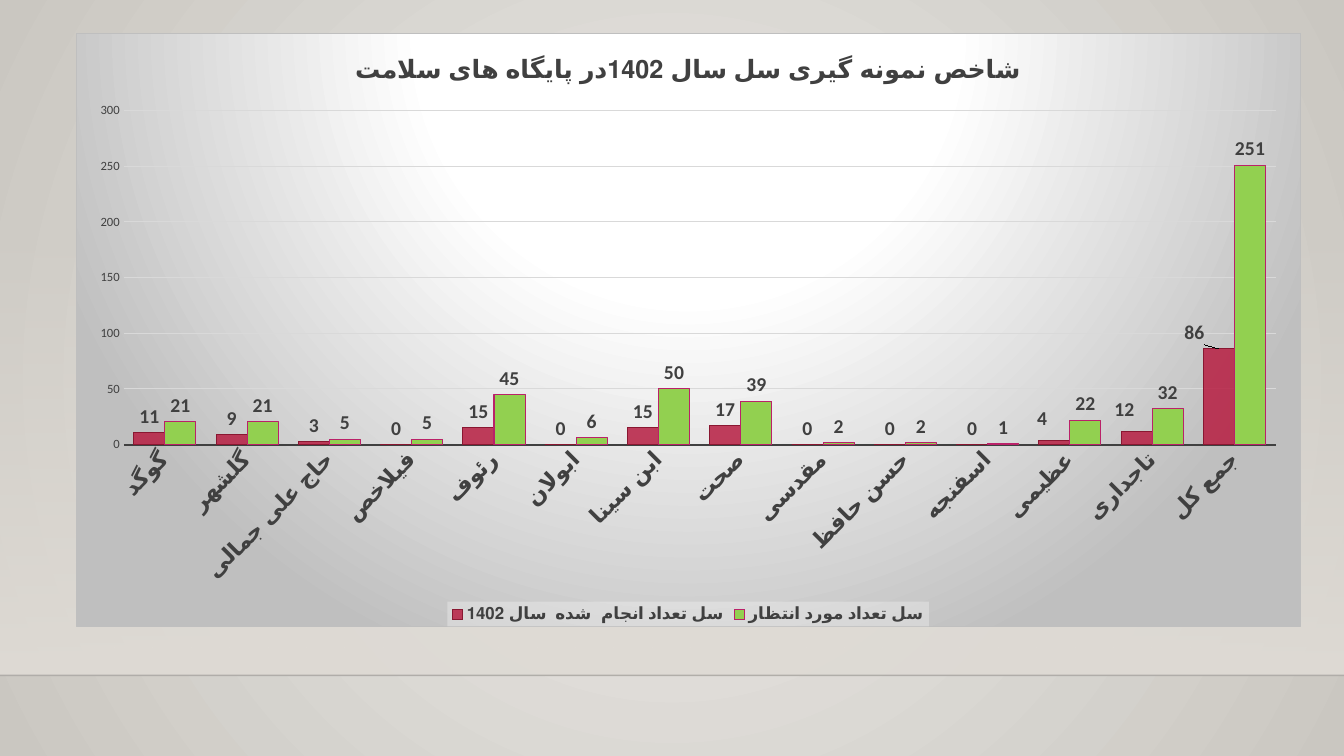
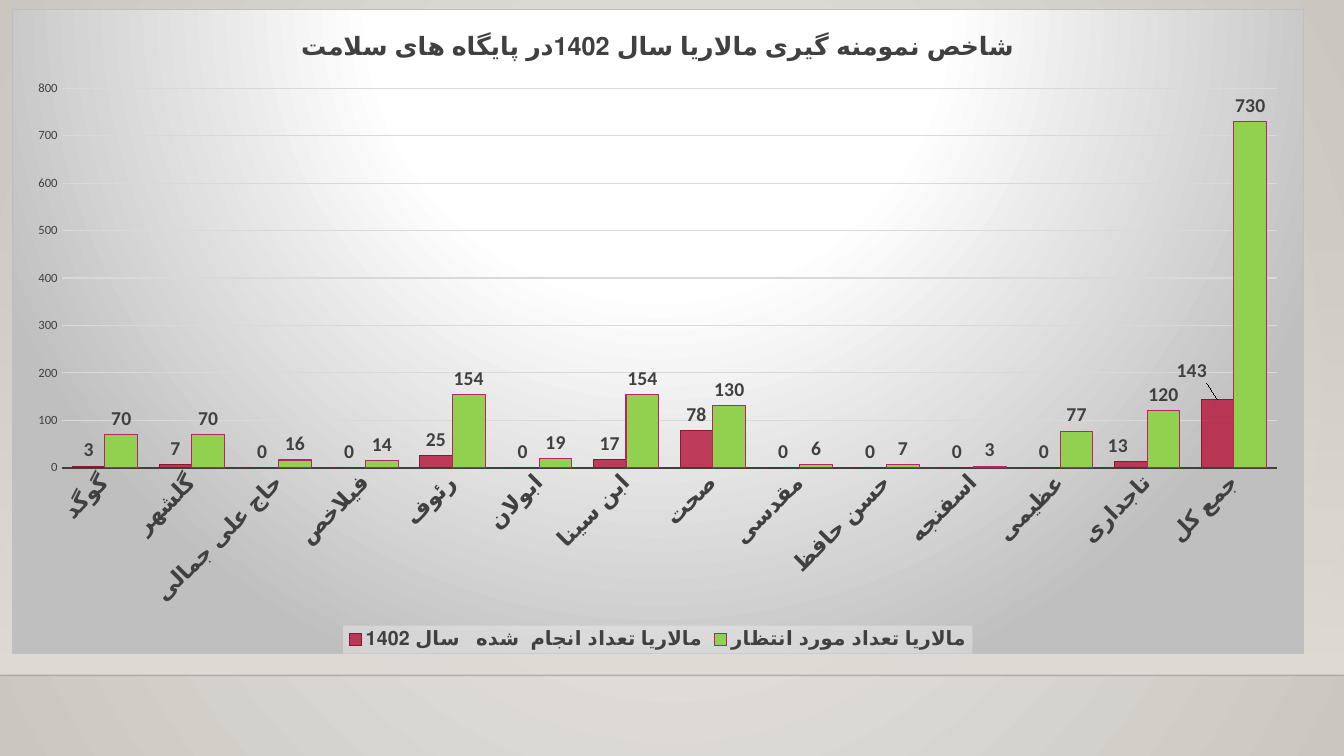
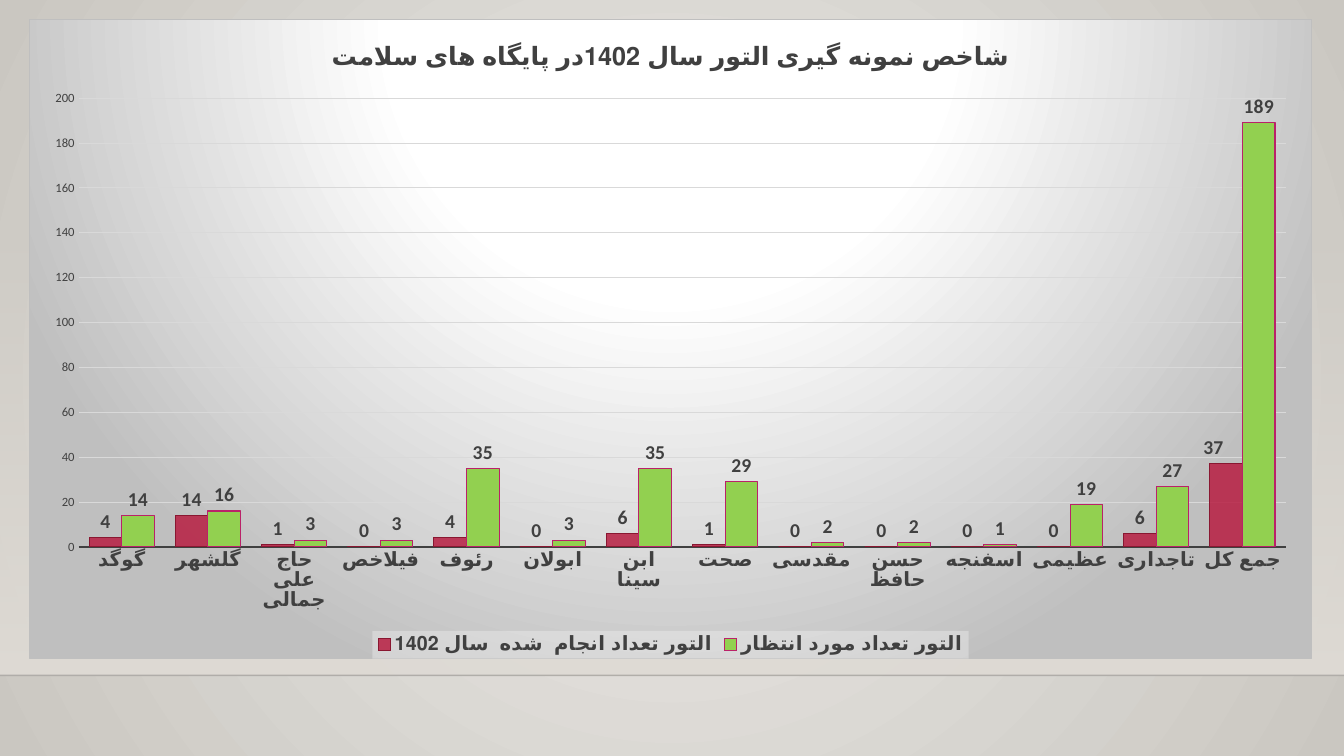
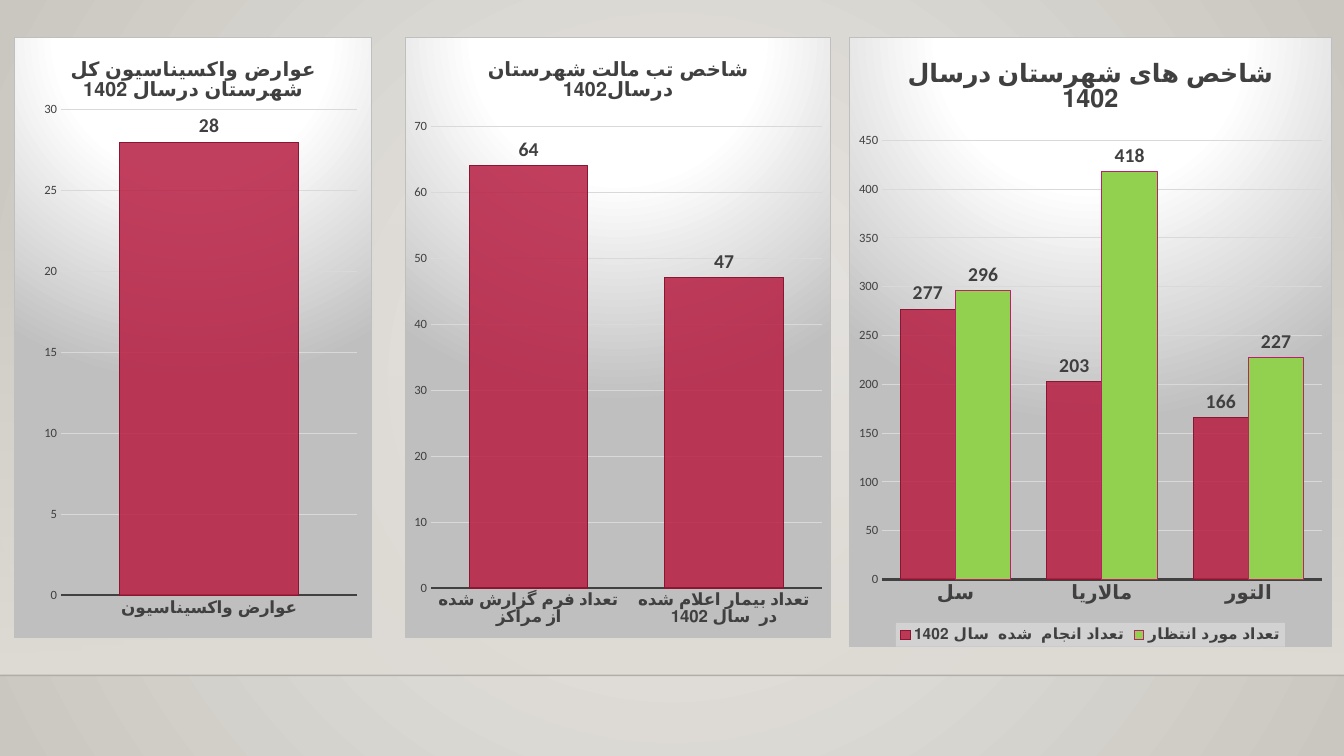
from lxml import etree
from pptx import Presentation
from pptx.chart.data import CategoryChartData
from pptx.dml.color import RGBColor
from pptx.enum import chart as ch, shapes
from pptx.oxml import parse_xml
from pptx.oxml.ns import nsdecls, qn
from pptx.util import Inches, Pt

FONT = "Calibri"
COLORS = {
    "bg_light": "ECEAE7", "bg_dark": "CAC7C1", "band": "DFDBD5", "floor": "000001",
    "white": "FFFFFF", "panel": "BFBFBF", "legend": "F2F2F2", "text": "404040",
    "grid": "D9D9D9", "done": "B71E42", "done_line": "891731",
    "expected": "92D050", "expected_line": "BA2169",
}
SERIES_STYLES = [("done", "done_line"), ("expected", "expected_line")]
CENTERS = ["گوگد", "گلشهر", "حاج علی جمالی", "فیلاخص", "رئوف", "ابولان", "ابن سینا",
           "صحت", "مقدسی", "حسن حافظ", "اسفنجه", "عظیمی", "تاجداری", "جمع کل"]


def rgb(name):
    return RGBColor.from_string(COLORS[name])


def add_alpha(color, percent):
    etree.SubElement(color, qn("a:alpha")).set("val", str(percent * 1000))


def gradient(stops, direction):
    gs = "".join(
        f'<a:gs pos="{pos * 1000}"><a:srgbClr val="{COLORS[name]}">'
        f'<a:alpha val="{alpha * 1000}"/></a:srgbClr></a:gs>'
        for pos, name, alpha in stops)
    return parse_xml(f'<a:gradFill {nsdecls("a")} rotWithShape="1">'
                     f'<a:gsLst>{gs}</a:gsLst>{direction}</a:gradFill>')


def circle(left, top, right, bottom):
    return (f'<a:path path="circle"><a:fillToRect l="{left * 1000}" t="{top * 1000}" '
            f'r="{right * 1000}" b="{bottom * 1000}"/></a:path>')


def replace_fill(parent, grad):
    solid = parent.find(qn("a:solidFill"))
    parent.replace(solid, grad)


def style_font(font, size, color="text", bold=True):
    font.name = FONT
    font.size = Pt(size)
    font.bold = bold
    font.color.rgb = rgb(color)


def build_master(prs, slide):
    master = prs.slide_master
    master.background.fill.solid()
    replace_fill(master.element.xpath(".//p:bgPr")[0],
                 gradient([(0, "bg_light", 100), (100, "bg_dark", 100)], circle(50, 50, 50, 50)))

    floor_y = Inches(6.7)
    band = slide.shapes.add_shape(shapes.MSO_SHAPE.RECTANGLE, 0, Inches(2.21),
                                  prs.slide_width, Inches(4.49))
    band.shadow.inherit = False
    band.line.fill.background()
    band.fill.solid()
    replace_fill(band.element.spPr,
                 gradient([(0, "band", 0), (100, "band", 100)], '<a:lin ang="5400000" scaled="0"/>'))

    floor = slide.shapes.add_connector(shapes.MSO_CONNECTOR.STRAIGHT, 0, floor_y,
                                       prs.slide_width, floor_y)
    floor.line.width = Pt(1)
    floor.line.color.rgb = rgb("floor")
    add_alpha(floor.element.xpath(".//a:ln//a:srgbClr")[0], 20)
    etree.SubElement(floor.element.spPr, qn("a:effectLst"))

    for i, sp in enumerate([band, floor]):
        sp.element.xpath(".//p:cNvPr")[0].set("id", str(101 + i))
        master.shapes.element.insert(2 + i, sp.element)


def style_panel(chart):
    panel = parse_xml(
        f'<c:spPr {nsdecls("c", "a")}><a:ln w="{Pt(0.75)}"><a:solidFill>'
        f'<a:srgbClr val="{COLORS["panel"]}"/></a:solidFill></a:ln></c:spPr>')
    panel.insert(0, gradient([(0, "white", 100), (39, "white", 100), (100, "panel", 100)],
                             circle(50, -80, 50, 180)))
    chart.element.find(qn("c:txPr")).addprevious(panel)


def style_axes(chart, cat_size, rotation):
    cat, val = chart.category_axis, chart.value_axis
    style_font(cat.tick_labels.font, cat_size)
    cat.format.line.color.rgb = rgb("text")
    cat.format.line.width = Pt(1.5)
    chart.element.xpath(".//c:catAx/c:txPr/a:bodyPr")[0].set("rot", str(rotation * 60000))
    style_font(val.tick_labels.font, 9, bold=False)
    val.format.line.fill.background()
    val.major_gridlines.format.line.color.rgb = rgb("grid")
    val.major_gridlines.format.line.width = Pt(0.75)
    for axis in (cat, val):
        axis.major_tick_mark = axis.minor_tick_mark = ch.XL_TICK_MARK.NONE


def style_legend(chart, size):
    chart.has_legend = True
    chart.legend.position = ch.XL_LEGEND_POSITION.BOTTOM
    chart.legend.include_in_layout = False
    style_font(chart.legend.font, size)
    box = parse_xml(f'<c:spPr {nsdecls("c", "a")}><a:solidFill>'
                    f'<a:srgbClr val="{COLORS["legend"]}"><a:alpha val="39000"/></a:srgbClr>'
                    f'</a:solidFill></c:spPr>')
    chart.element.xpath(".//c:legend/c:txPr")[0].addprevious(box)


def manual_layout(**values):
    items = "".join(f'<c:{key} val="{value}"/>' for key, value in values.items())
    return parse_xml(f'<c:layout {nsdecls("c")}><c:manualLayout>{items}'
                     f'</c:manualLayout></c:layout>')


def style_series(chart):
    for series, (fill, line) in zip(chart.plots[0].series, SERIES_STYLES):
        series.format.fill.solid()
        series.format.fill.fore_color.rgb = rgb(fill)
        series.format.line.color.rgb = rgb(line)
        series.format.line.width = Pt(0.75)
        labels = series.data_labels
        labels.show_value = True
        labels.position = ch.XL_LABEL_POSITION.OUTSIDE_END
        style_font(labels.font, 14)
    add_alpha(chart.element.xpath(".//c:ser/c:spPr/a:solidFill/a:srgbClr")[0], 85)


def shift_labels(chart, shifts):
    points = chart.plots[0].series[0].points
    for idx, (x, y) in shifts.items():
        label = points[idx].data_label
        style_font(label.font, 14)
        label.position = ch.XL_LABEL_POSITION.OUTSIDE_END
        dlbl = chart.element.xpath(f".//c:ser[1]//c:dLbl[c:idx/@val='{idx}']")[0]
        dlbl[0].addnext(manual_layout(x=x, y=y))


def add_column_chart(slide, box, title, cats, series, cat_size, title_size=18,
                     legend_size=None, rotation=-1000, shifts=None, plot=None):
    data = CategoryChartData()
    data.categories = cats
    for name, values in series:
        data.add_series(name, values)
    chart = slide.shapes.add_chart(ch.XL_CHART_TYPE.COLUMN_CLUSTERED,
                                   *map(Inches, box), data).chart
    chart.font.name = FONT
    chart.font.size = Pt(10)
    chart.has_title = True
    chart.chart_title.include_in_layout = False
    p = chart.chart_title.text_frame.paragraphs[0]
    p.text = title
    style_font(p.font, title_size)
    chart.plots[0].gap_width = 65
    chart.plots[0].vary_by_categories = False
    style_panel(chart)
    style_axes(chart, cat_size, rotation)
    style_series(chart)
    shift_labels(chart, shifts or {})
    if legend_size:
        style_legend(chart, legend_size)
    else:
        chart.has_legend = False
    if plot:
        area = chart.element.xpath(".//c:plotArea")[0]
        for old in area.findall(qn("c:layout")):
            area.remove(old)
        x, y, w, h = plot
        area.insert(0, manual_layout(layoutTarget="inner", xMode="edge", yMode="edge",
                                     x=x, y=y, w=w, h=h))


def main():
    prs = Presentation()
    prs.slide_width, prs.slide_height = Inches(13.33), Inches(7.5)
    tb, malaria, cholera, county = [prs.slides.add_slide(prs.slide_layouts[6]) for _ in range(4)]
    build_master(prs, tb)

    add_column_chart(
        tb, (0.75, 0.33, 12.15, 5.89), "شاخص نمونه گیری سل سال 1402در پایگاه های سلامت", CENTERS,
        [("سل تعداد انجام  شده  سال 1402", [11, 9, 3, 0, 15, 0, 15, 17, 0, 0, 0, 4, 12, 86]),
         ("سل تعداد مورد انتظار", [21, 21, 5, 5, 45, 6, 50, 39, 2, 2, 1, 22, 32, 251])],
        cat_size=16, legend_size=12, rotation=-45,
        shifts={11: (-0.01, -0.01), 12: (-0.01, -0.01), 13: (-0.02, 0)})
    add_column_chart(
        malaria, (0.12, 0.09, 12.81, 6.4),
        "شاخص نمومنه گیری مالاریا سال 1402در پایگاه های سلامت", CENTERS,
        [("مالاریا تعداد انجام  شده   سال 1402", [3, 7, 0, 0, 25, 0, 17, 78, 0, 0, 0, 0, 13, 143]),
         ("مالاریا تعداد مورد انتظار",
          [70, 70, 16, 14, 154, 19, 154, 130, 6, 7, 3, 77, 120, 730])],
        cat_size=16, legend_size=14, rotation=-45,
        shifts={12: (-0.01, 0), 13: (-0.02, -0.02)})
    add_column_chart(
        cholera, (0.29, 0.19, 12.72, 6.35),
        "شاخص نمونه گیری التور سال 1402در پایگاه های سلامت", CENTERS,
        [("التور تعداد انجام  شده  سال 1402", [4, 14, 1, 0, 4, 0, 6, 1, 0, 0, 0, 0, 6, 37]),
         ("التور تعداد مورد انتظار", [14, 16, 3, 3, 35, 3, 35, 29, 2, 2, 1, 19, 27, 189])],
        cat_size=14, legend_size=14, shifts={13: (-0.01, 0)})

    add_column_chart(
        county, (4.02, 0.37, 4.22, 5.96), "شاخص تب مالت شهرستان درسال1402",
        ["تعداد فرم گزارش شده از مراکز", "تعداد بیمار اعلام شده در  سال 1402"],
        [("Series 1", [64, 47])], cat_size=12, title_size=14)
    add_column_chart(
        county, (0.14, 0.37, 3.55, 5.96), "عوارض واکسیناسیون کل شهرستان درسال 1402",
        ["عوارض واکسیناسیون"], [("Series 1", [28])], cat_size=12, title_size=14,
        plot=(0.13, 0.12, 0.83, 0.81))
    add_column_chart(
        county, (8.42, 0.37, 4.79, 6.05), "شاخص های شهرستان درسال 1402",
        ["سل", "مالاریا", "التور"],
        [("تعداد انجام  شده  سال 1402", [277, 203, 166]),
         ("تعداد مورد انتظار", [296, 418, 227])],
        cat_size=14, legend_size=11)

    prs.save("out.pptx")


if __name__ == "__main__":
    main()
